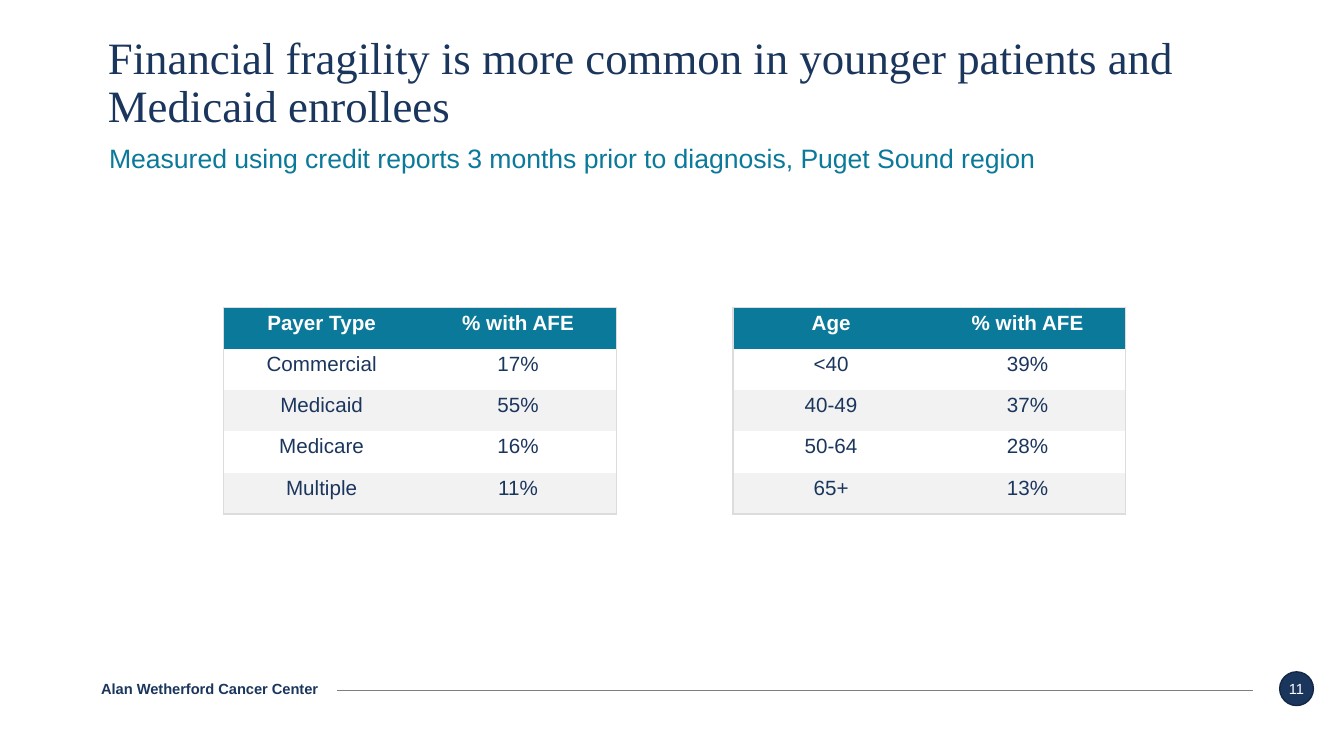
from dataclasses import dataclass

from lxml.etree import SubElement
from pptx import Presentation
from pptx.dml.color import RGBColor
from pptx.enum.shapes import MSO_CONNECTOR, MSO_SHAPE
from pptx.enum.text import MSO_ANCHOR, PP_ALIGN
from pptx.oxml.ns import qn
from pptx.util import Cm, Pt


@dataclass(frozen=True)
class Theme:
    navy: str = "1B365D"
    dark_navy: str = "142845"
    teal: str = "0A799A"
    white: str = "FFFFFF"
    band: str = "F2F2F2"
    border: str = "DCDCDC"
    rule: str = "7F7F7F"
    heading_font: str = "Times New Roman"
    body_font: str = "Arial"
    title_size: float = 32
    subtitle_size: float = 19
    table_size: float = 14.7
    footer_size: float = 10.5


THEME = Theme()

PAYER_ROWS = [
    ("Payer Type", "% with AFE"),
    ("Commercial", "17%"),
    ("Medicaid", "55%"),
    ("Medicare", "16%"),
    ("Multiple", "11%"),
]
AGE_ROWS = [
    ("Age", "% with AFE"),
    ("<40", "39%"),
    ("40-49", "37%"),
    ("50-64", "28%"),
    ("65+", "13%"),
]


def color(value):
    return RGBColor.from_string(value)


def write(frame, text, size, ink, font=THEME.body_font, bold=False,
          align=PP_ALIGN.LEFT, line_spacing=1.0, before=0):
    para = frame.paragraphs[0]
    para.alignment = align
    para.line_spacing = line_spacing
    para.space_before = Pt(before)
    span = para.add_run()
    span.text = text
    span.font.name = font
    span.font.size = Pt(size)
    span.font.bold = bold
    span.font.color.rgb = color(ink)


def add_text(page, box, text, anchor=MSO_ANCHOR.MIDDLE, **style):
    """Add a wrapped text box without insets; box is left, top, width, height in cm."""
    frame = page.shapes.add_textbox(*map(Cm, box)).text_frame
    frame.word_wrap = True
    frame.vertical_anchor = anchor
    frame.margin_left = frame.margin_right = 0
    frame.margin_top = frame.margin_bottom = 0
    write(frame, text, **style)


def add_heading(page, box):
    left, top, width, height = box
    title_height = 2.54
    subtitle_top = 2.65
    add_text(page, (left, top, width, title_height),
             "Financial fragility is more common in younger patients and Medicaid enrollees",
             size=THEME.title_size, ink=THEME.navy, font=THEME.heading_font,
             line_spacing=0.9)
    add_text(page, (left + 0.03, top + subtitle_top, width, height - subtitle_top),
             "Measured using credit reports 3 months prior to diagnosis, Puget Sound region",
             anchor=MSO_ANCHOR.TOP, size=THEME.subtitle_size, ink=THEME.teal,
             line_spacing=1.1, before=5)


def set_border(cell, side, visible):
    edge = SubElement(cell._tc.get_or_add_tcPr(), qn(f"a:ln{side}"), w=str(Pt(1)))
    if visible:
        fill = SubElement(edge, qn("a:solidFill"))
        SubElement(fill, qn("a:srgbClr"), val=THEME.border)
    else:
        SubElement(edge, qn("a:noFill"))


def add_share_table(page, box, rows):
    """Add a banded table with a teal header and a border around the outside only."""
    left, top, width, height = box
    row_count, column_count = len(rows), len(rows[0])
    table = page.shapes.add_table(row_count, column_count, *map(Cm, box)).table
    table.first_row = table.horz_banding = False
    for column in table.columns:
        column.width = Cm(width / column_count)
    for row in table.rows:
        row.height = Cm(height / row_count)

    for r, values in enumerate(rows):
        header = r == 0
        fill = THEME.teal if header else (THEME.white if r % 2 else THEME.band)
        for c, text in enumerate(values):
            cell = table.cell(r, c)
            outer_sides = {"L": c == 0, "R": c == column_count - 1,
                           "T": header, "B": r == row_count - 1}
            for side, visible in outer_sides.items():
                set_border(cell, side, visible)
            cell.fill.solid()
            cell.fill.fore_color.rgb = color(fill)
            cell.margin_top = cell.margin_bottom = Cm(0.1)
            cell.vertical_anchor = MSO_ANCHOR.TOP
            write(cell.text_frame, text, THEME.table_size,
                  THEME.white if header else THEME.navy,
                  bold=header, align=PP_ALIGN.CENTER)


def add_footer(page, box):
    left, top, width, height = box
    badge_size = 0.85
    badge_left = left + width - badge_size
    badge = page.shapes.add_shape(
        MSO_SHAPE.OVAL, Cm(badge_left), Cm(top + 0.08), Cm(badge_size), Cm(badge_size))
    badge.shadow.inherit = False
    badge.fill.solid()
    badge.fill.fore_color.rgb = color(THEME.navy)
    badge.line.color.rgb = color(THEME.dark_navy)
    badge.line.width = Pt(1)

    add_text(page, (left, top, 8.3, height), "Alan Wetherford Cancer Center",
             size=THEME.footer_size, ink=THEME.navy, bold=True)

    rule_y = Cm(top + 0.56)
    rule = page.shapes.add_connector(
        MSO_CONNECTOR.STRAIGHT, Cm(badge_left - 0.68), rule_y, Cm(left + 5.95), rule_y)
    rule.line.color.rgb = color(THEME.rule)
    rule.line.width = Pt(0.75)
    SubElement(rule._element.spPr, qn("a:effectLst"))

    number_width = 1.27
    number_left = badge_left + (badge_size - number_width) / 2
    add_text(page, (number_left, top, number_width, height), "11",
             size=THEME.footer_size, ink=THEME.white, align=PP_ALIGN.CENTER)


def main():
    deck = Presentation()
    deck.slide_width, deck.slide_height = Cm(33.87), Cm(19.05)
    page = deck.slides.add_slide(deck.slide_layouts[6])
    add_footer(page, (2.55, 16.85, 30.55, 1.02))
    add_heading(page, (2.72, 0.84, 28.42, 3.96))
    for left, rows in ((5.63, PAYER_ROWS), (18.47, AGE_ROWS)):
        add_share_table(page, (left, 7.75, 9.9, 5.2), rows)
    deck.save("out.pptx")


if __name__ == "__main__":
    main()
